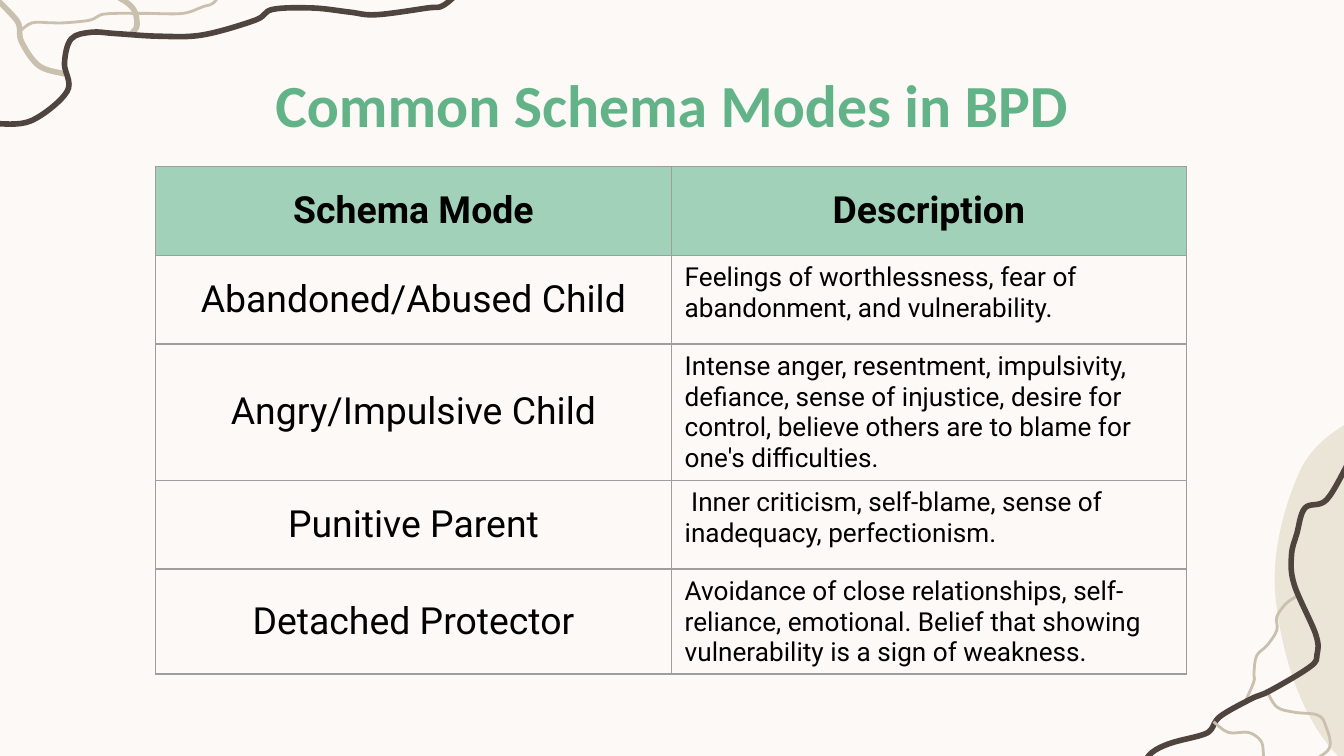
from typing import NamedTuple, Optional

from lxml.etree import SubElement
from pptx import Presentation
from pptx.dml.color import RGBColor
from pptx.enum.text import MSO_ANCHOR as Anchor, PP_ALIGN as Align
from pptx.oxml.ns import qn
from pptx.util import Emu, Pt

PX = 9144  # 100 px to the inch
BROWN, TAN, SAND = "50443F", "C9C0AD", "EBE5D8"
CREAM, GREEN, MINT = "FCF9F7", "63B389", "A1D1B8"
BLACK, GREY = "000000", "9E9E9E"

Point = tuple[int, int]


class Curve(NamedTuple):
    anchors: list[Point]
    color: str
    weight: Optional[float] = None  # None: a closed, filled outline


class Mode(NamedTuple):
    name: str
    description: str


BLOB = Curve([
    (1062, 302), (1044, 301), (1010, 310), (967, 351), (949, 444), (988, 554),
    (1097, 630), (1147, 644), (1270, 635), (1355, 565), (1370, 402), (1348, 393),
    (1305, 400), (1249, 466), (1207, 490), (1189, 490), (1162, 474), (1147, 407),
    (1119, 337), (1062, 302)], SAND)

STROKES = [
    Curve([(98, 25), (102, 18), (97, 4), (73, -10)], TAN, 3),
    Curve([(942, 513), (950, 526), (963, 530), (980, 532), (986, 539), (989, 557),
           (971, 569)], TAN, 1.5),
    Curve([(966, 443), (957, 449), (950, 459), (950, 469), (943, 480), (935, 488),
           (933, 501), (933, 507), (927, 521)], TAN, 1.5),
    Curve([(1003, 345), (987, 372), (971, 378), (965, 397), (961, 413), (963, 435),
           (979, 472), (980, 487), (975, 496), (945, 514), (931, 520), (908, 533),
           (901, 543), (894, 547), (871, 553), (857, 560), (850, 570)], BROWN, 3),
    Curve([(903, 537), (914, 545), (929, 545), (938, 551), (940, 559), (940, 569)],
          TAN, 1.5),
    Curve([(48, 55), (29, 49), (16, 31), (14, 18), (7, 9), (-3, -1)], TAN, 3),
    Curve([(-5, 92), (23, 90), (50, 68), (48, 47), (53, 29), (68, 24), (86, 25),
           (119, 27), (151, 26), (190, 15), (203, 7), (233, 6), (260, 9), (280, 11),
           (318, 6), (330, 4), (345, -9)], BROWN, 3),
    Curve([(15, 23), (24, 17), (38, 17), (48, 17), (67, 15), (75, 11), (86, 10),
           (102, 10), (111, 10), (136, 10), (151, 5), (159, 2), (167, -9)], TAN, 1.5),
]

HEADER = Mode("Schema Mode", "Description")
MODES = [
    Mode("Abandoned/Abused Child",
         "Feelings of worthlessness, fear of abandonment, and vulnerability."),
    Mode("Angry/Impulsive Child",
         "Intense anger, resentment, impulsivity, defiance, sense of injustice, "
         "desire for control, believe others are to blame for one's difficulties."),
    Mode("Punitive Parent",
         " Inner criticism, self-blame, sense of inadequacy, perfectionism."),
    Mode("Detached Protector",
         "Avoidance of close relationships, self-reliance, emotional. "
         "Belief that showing vulnerability is a sign of weakness."),
]


def px(length: float) -> Emu:
    return Emu(round(length * PX))


def rgb(color: str) -> RGBColor:
    return RGBColor.from_string(color)


def round_segments(outline, closed: bool) -> None:
    """Turn the straight segments into Bézier curves through the same anchors."""
    segments = list(outline._element.iter(qn("a:lnTo")))
    nodes = [next(outline._element.iter(qn("a:moveTo"))), *segments]
    anchors = [(int(node[0].get("x")), int(node[0].get("y"))) for node in nodes]
    before, after = (anchors[-2], anchors[1]) if closed else (anchors[0], anchors[-1])
    padded = [before, *anchors, after]
    for segment, a, b, c, d in zip(segments, padded, padded[1:], padded[2:], padded[3:]):
        segment.tag = qn("a:cubicBezTo")
        leaving = [q + (r - p) / 6 for p, q, r in zip(a, b, c)]
        arriving = [r - (s - q) / 6 for q, r, s in zip(b, c, d)]
        for position, (x, y) in enumerate((leaving, arriving)):
            control = SubElement(segment, qn("a:pt"), x=str(round(x)), y=str(round(y)))
            segment.insert(position, control)


def draw_curve(slide, curve: Curve) -> None:
    closed = curve.weight is None
    start, *rest = [(px(x), px(y)) for x, y in curve.anchors]
    builder = slide.shapes.build_freeform(*start, scale=1.0)
    builder.add_line_segments(rest, close=closed)
    outline = builder.convert_to_shape()
    round_segments(outline, closed)
    outline.shadow.inherit = False
    if closed:
        outline.fill.solid()
        outline.fill.fore_color.rgb = rgb(curve.color)
        outline.line.fill.background()
    else:
        outline.fill.background()
        outline.line.color.rgb = rgb(curve.color)
        outline.line.width = Pt(curve.weight)


def write(frame, text: str, font: str, size: int, color: str,
          bold: bool, align: Align) -> None:
    frame.text = text
    paragraph = frame.paragraphs[0]
    paragraph.alignment = align
    style = paragraph.runs[0].font
    style.name, style.size, style.bold = font, Pt(size), bold
    style.color.rgb = rgb(color)


def draw_title(slide, text: str) -> None:
    title = slide.shapes.add_textbox(px(83), px(46), px(834), px(63)).text_frame
    title.word_wrap = True
    title.vertical_anchor = Anchor.MIDDLE
    title.margin_left = title.margin_right = px(10)
    title.margin_top = title.margin_bottom = px(10)
    write(title, text, "Calibri", 32, GREEN, True, Align.CENTER)


def add_borders(cell) -> None:
    properties = cell._tc.get_or_add_tcPr()
    for side in ("a:lnL", "a:lnR", "a:lnT", "a:lnB"):
        border = SubElement(properties, qn(side), w=str(Pt(0.75)))
        fill = SubElement(border, qn("a:solidFill"))
        SubElement(fill, qn("a:srgbClr"), val=GREY)


def draw_modes(slide) -> None:
    entries = [HEADER, *MODES]
    table = slide.shapes.add_table(
        len(entries), len(HEADER), px(116), px(124), px(767), px(66 * len(entries))).table
    for row, entry in enumerate(entries):
        for column, text in enumerate(entry):
            cell = table.cell(row, column)
            is_header = row == 0
            is_label = is_header or column == 0
            add_borders(cell)
            if is_header:
                cell.fill.solid()
                cell.fill.fore_color.rgb = rgb(MINT)
            else:
                cell.fill.background()
            cell.vertical_anchor = Anchor.MIDDLE if is_label else Anchor.TOP
            if not is_label:
                cell.margin_bottom = px(3)
            write(cell.text_frame, text, "Roboto", 20 if is_label else 14, BLACK,
                  is_header, Align.CENTER if is_label else Align.LEFT)


def main() -> None:
    deck = Presentation()
    deck.slide_width, deck.slide_height = px(1000), px(562.5)
    slide = deck.slides.add_slide(deck.slide_layouts[6])
    slide.background.fill.solid()
    slide.background.fill.fore_color.rgb = rgb(CREAM)
    for curve in [BLOB, *STROKES]:
        draw_curve(slide, curve)
    draw_title(slide, "Common Schema Modes in BPD")
    draw_modes(slide)
    deck.save("out.pptx")


if __name__ == "__main__":
    main()
